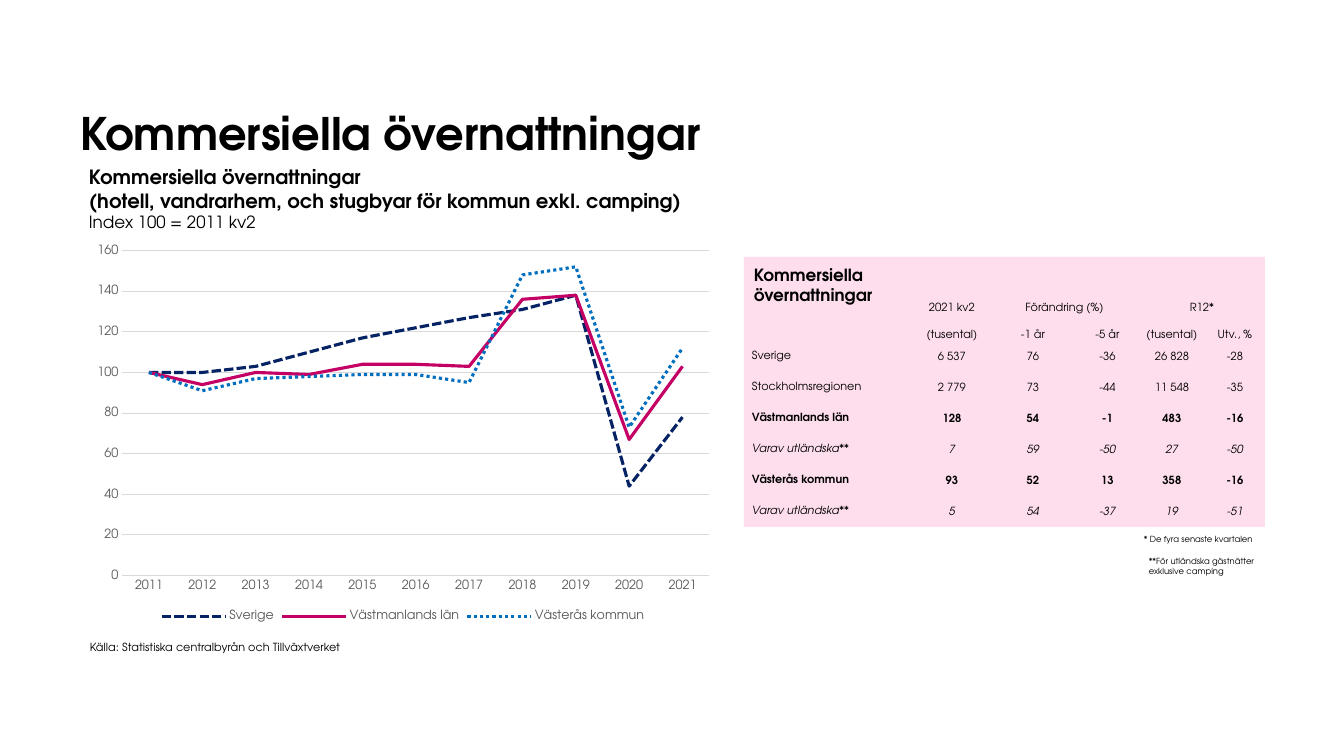
import pptx
import pptx.chart.data
import pptx.dml.color
import pptx.enum.chart
import pptx.enum.dml
import pptx.enum.shapes
import pptx.enum.text
import pptx.oxml
import pptx.util

PX = 914400 / 100.8
FONT = "TeX Gyre Adventor"
COLORS = {"text": "000000", "panel": "FEDEED", "axis": "595959", "grid": "D9D9D9",
          "Sverige": "052364", "Västmanlands län": "C40064", "Västerås kommun": "006EBF"}
ALIGN = pptx.enum.text.PP_ALIGN
ANCHOR = pptx.enum.text.MSO_ANCHOR
DASH = pptx.enum.dml.MSO_LINE


def px(*lengths):
    return [pptx.util.Emu(round(n * PX)) for n in lengths]


def style(font, size, color="text", bold=False, italic=False):
    font.name, font.size = FONT, pptx.util.Pt(size)
    font.bold, font.italic = bold, italic
    font.color.rgb = pptx.dml.color.RGBColor.from_string(COLORS[color])


prs = pptx.Presentation()
prs.slide_width, prs.slide_height = px(1344, 756)
s = prs.slides.add_slide(prs.slide_layouts[5])

# Title
title = s.shapes.title
title.left, title.top, title.width, title.height = px(80, 37, 929, 123)
tf = title.text_frame
tf.margin_left = tf.margin_top = tf.margin_right = tf.margin_bottom = 0
tf.auto_size = pptx.enum.text.MSO_AUTO_SIZE.NONE
tf.vertical_anchor = ANCHOR.BOTTOM
p = tf.paragraphs[0]
p.alignment = ALIGN.LEFT
r = p.add_run()
r.text = "Kommersiella övernattningar"
style(r.font, 32, bold=True)

# Pink panel behind the table
panel = s.shapes.add_shape(pptx.enum.shapes.MSO_SHAPE.RECTANGLE, *px(744, 257, 521, 270))
panel.shadow.inherit = False
panel.fill.solid()
panel.fill.fore_color.rgb = pptx.dml.color.RGBColor.from_string(COLORS["panel"])
panel.line.fill.background()

# Text boxes: place, then lines of (text, size, bold)
boxes = [
    ((79, 160, 638, 78), [("Kommersiella övernattningar", 14, True),
                          ("(hotell, vandrarhem, och stugbyar för kommun exkl. camping)", 14, True),
                          ("Index 100 = 2011 kv2", 12, False)]),
    ((744, 260, 242, 50), [("Kommersiella", 12, True), ("övernattningar", 12, True)]),
    ((80, 635, 290, 24), [("Källa: Statistiska centralbyrån och Tillväxtverket", 8, False)]),
    ((1134, 529, 140, 20), [("* De fyra senaste kvartalen", 6, False)]),
    ((1139, 551, 130, 30), [("**För utländska gästnätter exklusive camping", 6, False)]),
]
for place, lines in boxes:
    tf = s.shapes.add_textbox(*px(*place)).text_frame
    tf.word_wrap = True
    for i, (text, size, bold) in enumerate(lines):
        p = tf.add_paragraph() if i else tf.paragraphs[0]
        r = p.add_run()
        r.text = text
        style(r.font, size, bold=bold)

# Table: rows of (cells, bold, italic)
rows = [
    (["", "2021 kv2", "Förändring (%)", "", "R12*", ""], False, False),
    (["", "(tusental)", "-1 år", "-5 år", "(tusental)", "Utv., %"], False, False),
    (["Sverige", "6 537", "76", "-36", "26 828", "-28"], False, False),
    (["Stockholmsregionen", "2 779", "73", "-44", "11 548", "-35"], False, False),
    (["Västmanlands län", "128", "54", "-1", "483", "-16"], True, False),
    (["Varav utländska**", "7", "59", "-50", "27", "-50"], False, True),
    (["Västerås kommun", "93", "52", "13", "358", "-16"], True, False),
    (["Varav utländska**", "5", "54", "-37", "19", "-51"], False, True),
]
frame = s.shapes.add_table(len(rows), 6, *px(744, 288, 521, 239))
table = frame.table
table.first_row = table.horz_banding = False
style_id = table._tbl.tblPr.find(pptx.oxml.ns.qn("a:tableStyleId"))
style_id.text = "{2D5ABB26-0587-4C30-8999-92F81FD0307C}"
for column, width in zip(table.columns, px(170, 76, 86, 63, 66, 60)):
    column.width = width
for row, height in zip(table.rows, px(26, 27, *[31] * 6)):
    row.height = height
for y, (texts, bold, italic) in enumerate(rows):
    for x, text in enumerate(texts):
        cell = table.cell(y, x)
        cell.fill.background()
        cell.margin_left, cell.margin_top, cell.margin_right, cell.margin_bottom = px(
            1 if x else 8, 1 if x else 0, 1 if x else 0, 0)
        cell.vertical_anchor = ANCHOR.BOTTOM if y < 2 else ANCHOR.MIDDLE
        p = cell.text_frame.paragraphs[0]
        p.alignment = ALIGN.CENTER if x else ALIGN.LEFT
        if text:
            r = p.add_run()
            r.text = text
            style(r.font, 8, bold=bold, italic=italic)
        else:
            end = pptx.oxml.parse_xml(
                '<a:endParaRPr xmlns:a="http://schemas.openxmlformats.org/drawingml/2006/main" sz="800"/>')
            p._p.append(end)
for x in (2, 4):
    table.cell(0, x).merge(table.cell(0, x + 1))

# Line chart
series = [
    ("Sverige", [100, 100, 103, 110, 117, 122, 127, 131, 138, 44, 78], DASH.SQUARE_DOT),
    ("Västmanlands län", [100, 94, 100, 99, 104, 104, 103, 136, 138, 67, 103], None),
    ("Västerås kommun", [100, 91, 97, 98, 99, 99, 95, 148, 152, 73, 112], DASH.ROUND_DOT),
]
data = pptx.chart.data.CategoryChartData()
data.categories = [str(year) for year in range(2011, 2022)]
for name, values, dash in series:
    data.add_series(name, values)
chart = s.shapes.add_chart(pptx.enum.chart.XL_CHART_TYPE.LINE, *px(84, 239, 638, 387), data).chart
style(chart.font, 10)
chart.has_title = False
chart.has_legend = True
chart.legend.position = pptx.enum.chart.XL_LEGEND_POSITION.BOTTOM
chart.legend.include_in_layout = False
style(chart.legend.font, 9, "axis")
chart.plots[0].vary_by_categories = False
for line, (name, values, dash) in zip(chart.plots[0].series, series):
    line.smooth = False
    line.marker.style = pptx.enum.chart.XL_MARKER_STYLE.NONE
    line.format.line.width = pptx.util.Pt(2.25)
    line.format.line.color.rgb = pptx.dml.color.RGBColor.from_string(COLORS[name])
    if dash:
        line.format.line.dash_style = dash
        # Short dashes for Sverige, dots for Västerås kommun
        preset = line.format.line._ln.find(pptx.oxml.ns.qn("a:prstDash"))
        preset.set("val", "sysDash" if dash == DASH.SQUARE_DOT else "sysDot")

# Axes and plot area
years, index = chart.category_axis, chart.value_axis
index.minimum_scale, index.maximum_scale, index.major_unit = 0, 160, 20
for axis in (years, index):
    axis.major_tick_mark = axis.minor_tick_mark = pptx.enum.chart.XL_TICK_MARK.NONE
    style(axis.tick_labels.font, 9, "axis")
index.format.line.fill.background()
for line in (years.format.line, index.major_gridlines.format.line):
    line.width = pptx.util.Pt(0.75)
    line.color.rgb = pptx.dml.color.RGBColor.from_string(COLORS["grid"])
plot_area = chart._chartSpace.chart.plotArea
for old in plot_area.findall(pptx.oxml.ns.qn("c:layout")):
    plot_area.remove(old)
plot_area.insert(0, pptx.oxml.parse_xml(
    '<c:layout xmlns:c="http://schemas.openxmlformats.org/drawingml/2006/chart"><c:manualLayout>'
    '<c:layoutTarget val="inner"/><c:xMode val="edge"/><c:yMode val="edge"/>'
    '<c:x val="0.06"/><c:y val="0.03"/><c:w val="0.92"/><c:h val="0.84"/>'
    '</c:manualLayout></c:layout>'))

prs.save("out.pptx")
